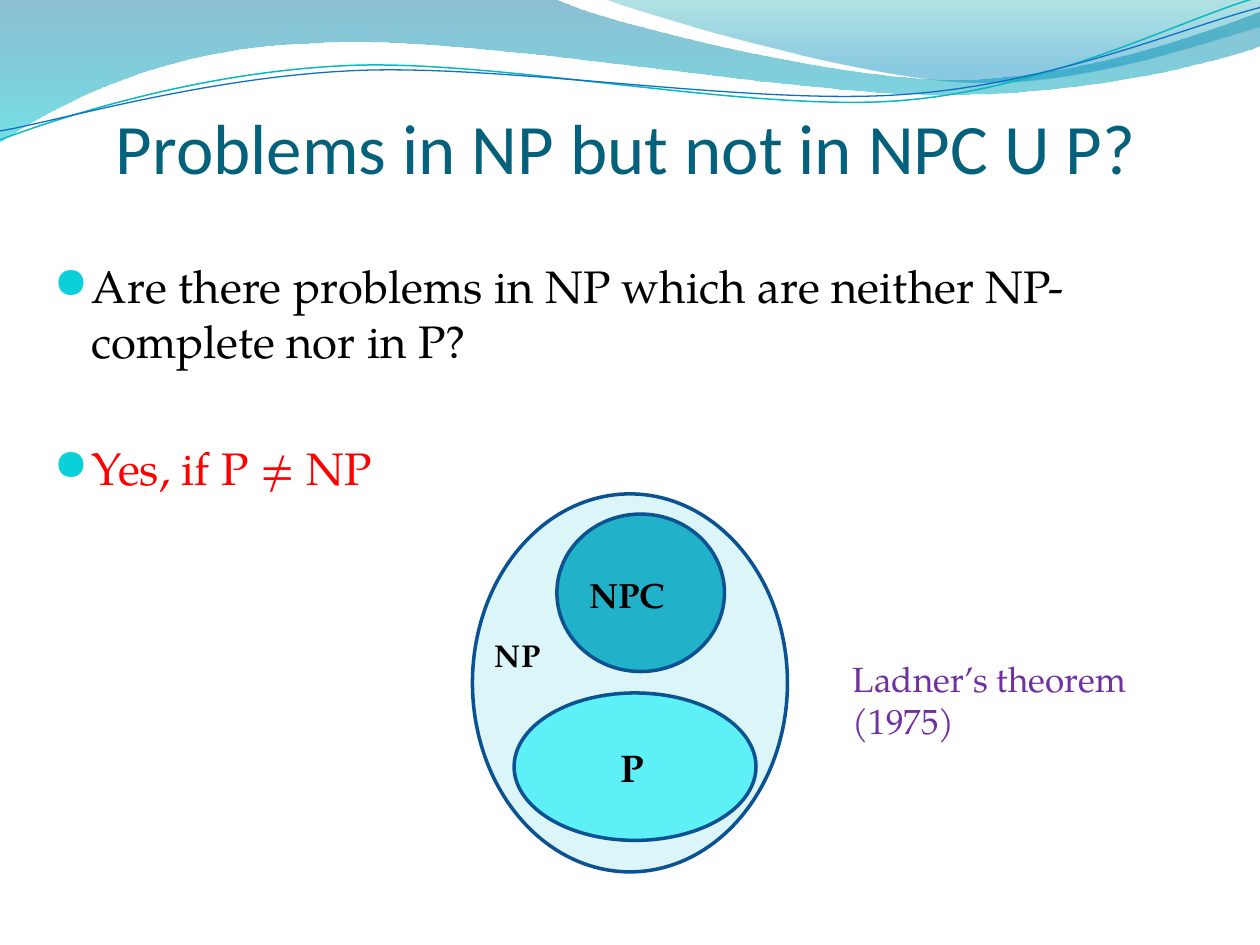
from math import cos, radians, sin

from lxml.etree import SubElement
from pptx import Presentation
from pptx.dml.color import RGBColor
from pptx.enum.shapes import MSO_SHAPE
from pptx.enum.text import MSO_ANCHOR, MSO_AUTO_SIZE, PP_ALIGN
from pptx.oxml.ns import qn
from pptx.util import Inches, Pt

TITLE_BLUE = RGBColor(0x04, 0x61, 0x7B)
BULLET_CYAN = RGBColor(0x0B, 0xD0, 0xD9)
BLACK = RGBColor(0x00, 0x00, 0x00)
RED = RGBColor(0xFF, 0x00, 0x00)
PURPLE = RGBColor(0x70, 0x30, 0xA0)
OUTLINE = RGBColor(0x0B, 0x52, 0x92)
NP_FILL = RGBColor(0xDB, 0xF5, 0xF9)
NPC_FILL = RGBColor(0x21, 0xB2, 0xC9)
P_FILL = RGBColor(0x5E, 0xF0, 0xF7)
WAVE_BLUE = RGBColor(0x00, 0x74, 0xA1)
WAVE_TEAL = RGBColor(0x00, 0xC6, 0xCF)
CREST_TEAL = RGBColor(0x00, 0xA1, 0xA9)
CREST_BLUE = RGBColor(0x00, 0x8B, 0xBF)
LINE_TEAL = RGBColor(0x0A, 0xB8, 0xBF)
LINE_BLUE = RGBColor(0x0F, 0x6F, 0xC6)

HEADING_FONT = "Calibri"
BODY_FONT = "TeX Gyre Pagella"
BULLET_FONT = "OpenSymbol"
CURVE_TILT = -2.7

# Each outline is a list of points (x, y) and Bezier curves (x1, y1, x2, y2, x, y)
WAVE = [
    (0, 0), (4.4, -0.01),
    (4.76, 0.17, 6.64, 0.63, 7.58, 0.63), (8.53, 0.63, 9.58, 0.26, 10, 0.09),
    (10.01, 0.36),
    (9.83, 0.44, 8.7, 0.76, 7.46, 0.75), (6.22, 0.75, 3.82, 0.28, 2.57, 0.34),
    (1.29, 0.36, 0.46, 0.83, -0.01, 1.13),
]
CREST = [
    (4.79, -0.01),
    (5.09, 0.11, 6.82, 0.62, 7.69, 0.65), (8.56, 0.69, 9.61, 0.32, 10, 0.21),
    (10, 0),
]
TEAL_CURVE = [
    (0, 1.11),
    (0.48, 0.93, 1.58, 0.57, 2.77, 0.52), (3.95, 0.47, 5.93, 0.89, 7.13, 0.8),
    (8.33, 0.71, 9.38, 0.15, 9.98, -0.02),
]
BLUE_CURVE = [
    (0, 1.04),
    (0.47, 0.96, 1.64, 0.61, 2.83, 0.56), (4.03, 0.51, 5.97, 0.84, 7.17, 0.75),
    (8.36, 0.67, 9.41, 0.21, 10, 0.06),
]


def turn(outline, center, degrees):
    """Turn every point of the outline clockwise around the center."""
    c, s = cos(radians(degrees)), sin(radians(degrees))
    turned = []
    for segment in outline:
        numbers = []
        for x, y in zip(segment[::2], segment[1::2]):
            dx, dy = x - center[0], y - center[1]
            numbers += [center[0] + dx * c - dy * s, center[1] + dx * s + dy * c]
        turned.append(tuple(numbers))
    return turned


def add_outline(slide, outline, close):
    anchors = [(Inches(s[-2]), Inches(s[-1])) for s in outline]
    builder = slide.shapes.build_freeform(*anchors[0])
    builder.add_line_segments(anchors[1:], close=close)
    shape = builder.convert_to_shape()
    shape.shadow.inherit = False
    # Bend the straight segments that have control points
    lines = list(shape._element.iter(qn("a:lnTo")))
    for line, segment in zip(lines, outline[1:]):
        if len(segment) == 6:
            line.tag = qn("a:cubicBezTo")
            line.remove(line[0])
            for x, y in zip(segment[::2], segment[1::2]):
                SubElement(line, qn("a:pt"), x=str(Inches(x) - shape.left),
                           y=str(Inches(y) - shape.top))
    return shape


def add_wave(slide, outline, stops):
    """Add a filled wave; each stop is position, colour, opacity percent."""
    wave = add_outline(slide, outline, close=True)
    wave.line.fill.background()
    wave.fill.gradient()
    wave.fill.gradient_angle = 270
    for stop, (position, color, _) in zip(wave.fill.gradient_stops, stops):
        stop.position = position
        stop.color.rgb = color
    colors = wave._element.spPr.iter(qn("a:srgbClr"))
    for element, (_, _, opacity) in zip(colors, stops):
        SubElement(element, qn("a:alpha"), val=str(opacity * 1000))


def add_curve(slide, outline, center, color, width):
    level = turn(outline, center, -CURVE_TILT)
    curve = add_outline(slide, level, close=False)
    curve.rotation = CURVE_TILT
    curve.fill.background()
    curve.line.color.rgb = color
    curve.line.width = Pt(width)


def format_text(paragraph, size, color, font=BODY_FONT, bold=False):
    for run in paragraph.runs:
        run.font.name = font
        run.font.size = Pt(size)
        run.font.bold = bold
        run.font.color.rgb = color


def set_title(slide, text):
    title = slide.shapes.title
    title.left, title.top = Inches(0.42), Inches(0.85)
    title.width, title.height = Inches(9.5), Inches(0.65)
    frame = title.text_frame
    frame.text = text
    frame.auto_size = MSO_AUTO_SIZE.NONE
    frame.vertical_anchor = MSO_ANCHOR.BOTTOM
    frame.margin_left = Inches(0.5)
    frame.margin_right = frame.margin_bottom = 0
    frame.paragraphs[0].alignment = PP_ALIGN.LEFT
    format_text(frame.paragraphs[0], 40.5, TITLE_BLUE, HEADING_FONT)
    # Bring the title in front of the waves
    slide.shapes._spTree.append(title._element)


def add_text_frame(slide, left, top, width, height):
    box = slide.shapes.add_textbox(
        Inches(left), Inches(top), Inches(width), Inches(height))
    box.text_frame.word_wrap = True
    return box.text_frame


def add_label(slide, text, left, top, width, height, size,
              color=BLACK, bold=True):
    frame = add_text_frame(slide, left, top, width, height)
    frame.text = text
    format_text(frame.paragraphs[0], size, color, bold=bold)


def add_bullet(paragraph, text, color, space_before):
    paragraph.text = text
    paragraph.space_before = Pt(space_before)
    format_text(paragraph, 26, color)
    properties = paragraph._p.get_or_add_pPr()
    properties.set("marL", str(Inches(0.3)))
    properties.set("indent", str(-Inches(0.3)))
    bullet_color = SubElement(properties, qn("a:buClr"))
    SubElement(bullet_color, qn("a:srgbClr"), val=str(BULLET_CYAN))
    SubElement(properties, qn("a:buSzPct"), val="95000")
    SubElement(properties, qn("a:buFont"), typeface=BULLET_FONT)
    SubElement(properties, qn("a:buChar"), char="●")


def add_class_oval(slide, left, top, width, height, fill):
    oval = slide.shapes.add_shape(
        MSO_SHAPE.OVAL, Inches(left), Inches(top), Inches(width), Inches(height))
    oval.shadow.inherit = False
    oval.fill.solid()
    oval.fill.fore_color.rgb = fill
    oval.line.color.rgb = OUTLINE
    oval.line.width = Pt(2)


def main():
    deck = Presentation()
    deck.slide_width, deck.slide_height = Inches(10), Inches(7.5)
    slide = deck.slides.add_slide(deck.slide_layouts[5])

    # Wave decoration along the top
    add_wave(slide, WAVE, [(0, WAVE_BLUE, 45), (1, WAVE_TEAL, 55)])
    add_wave(slide, CREST, [(0, CREST_TEAL, 30), (0.8, CREST_BLUE, 45)])
    add_curve(slide, TEAL_CURVE, (4.99, 0.57), LINE_TEAL, 0.85)
    add_curve(slide, BLUE_CURVE, (5, 0.59), LINE_BLUE, 0.75)

    # Title, question and answer
    set_title(slide, "Problems in NP but not in NPC U P?")
    body = add_text_frame(slide, 0.33, 2, 9.42, 4.92)
    add_bullet(body.paragraphs[0],
               "Are there problems in NP which are neither NP-complete nor in P?",
               BLACK, 5.2)
    add_bullet(body.add_paragraph(), "Yes, if P ≠ NP", RED, 41.5)

    # Nested complexity classes
    add_class_oval(slide, 3.75, 3.92, 2.5, 3, NP_FILL)
    add_class_oval(slide, 4.42, 4.08, 1.33, 1.25, NPC_FILL)
    add_label(slide, "NPC", 4.58, 4.5, 1, 0.44, 20)
    add_class_oval(slide, 4.08, 5.5, 1.92, 1.17, P_FILL)
    add_label(slide, "P", 4.83, 5.86, 1.25, 0.47, 22)
    add_label(slide, "NP", 3.83, 5, 0.67, 0.4, 18)

    # Source of the result
    add_label(slide, "Ladner’s theorem (1975)", 6.67, 5.17, 2.83, 0.77, 20,
              PURPLE, bold=False)

    deck.save("out.pptx")


if __name__ == "__main__":
    main()
